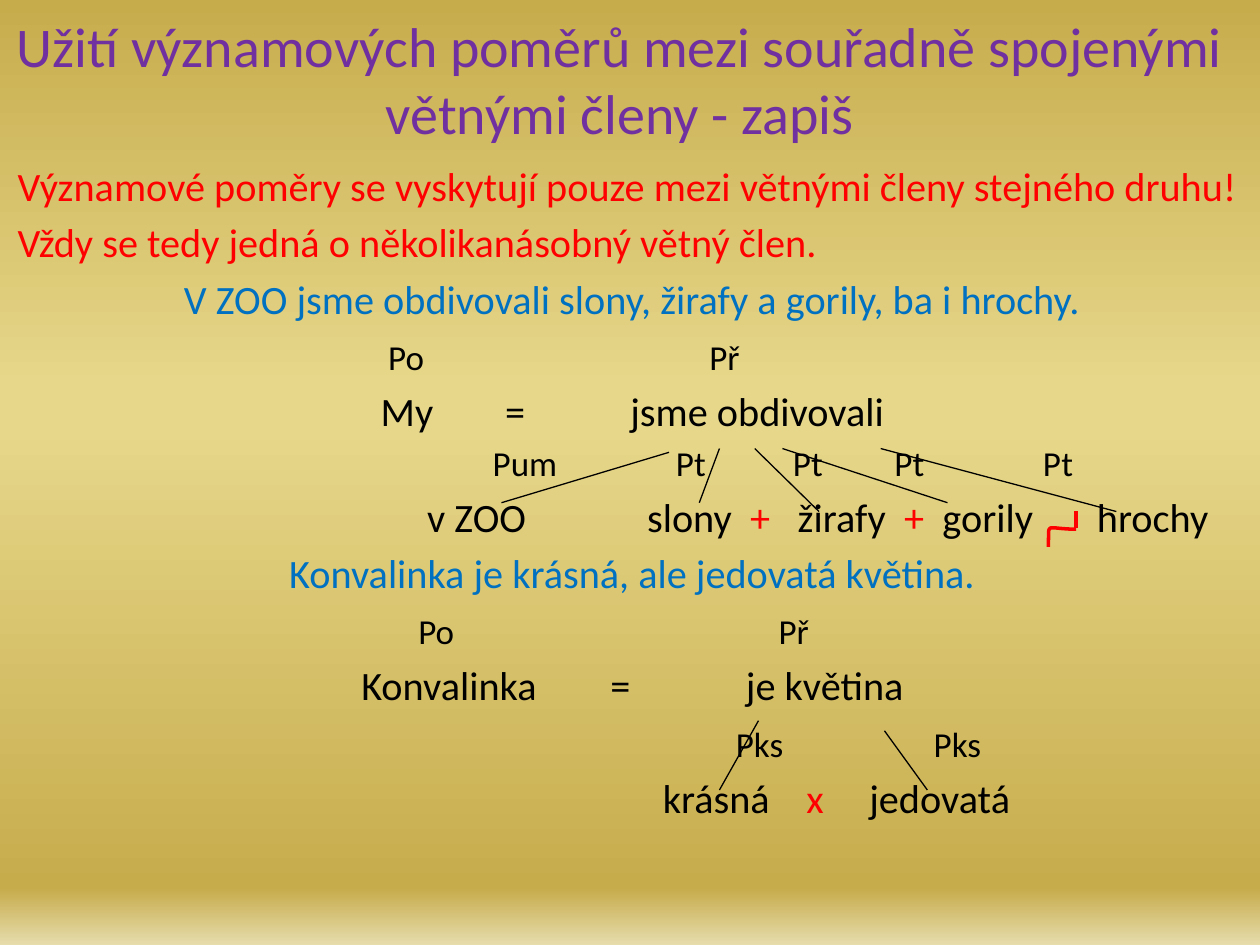
from dataclasses import dataclass

from lxml.etree import SubElement
from pptx import Presentation
from pptx.dml.color import RGBColor
from pptx.enum.shapes import MSO_CONNECTOR as Connector
from pptx.enum.text import MSO_ANCHOR as Anchor, MSO_AUTO_SIZE as AutoSize, PP_ALIGN as Align
from pptx.oxml.ns import qn
from pptx.util import Inches, Pt


@dataclass(frozen=True)
class Theme:
    font: str = "Calibri"
    title_size: float = 32
    body_size: float = 23
    label_size: float = 20
    space_share: float = 0.226
    thin: float = 0.75
    thick: float = 2
    purple: str = "7030A0"
    red: str = "FF0000"
    blue: str = "0070C0"
    black: str = "000000"
    gradient: tuple = ((0, "C7AC4C"), (41, "E6D78A"), (45, "E6D78A"), (94, "C7AC4C"), (100, "E6DCAC"))


def set_attributes(target, values):
    for name, value in values.items():
        setattr(target, name, value)


class SlideBuilder:
    COLUMNS = 100

    def __init__(self, presentation, theme):
        self.theme = theme
        self.cell = presentation.slide_width / self.COLUMNS
        self.slide = presentation.slides.add_slide(presentation.slide_layouts[1])

    def grid(self, *cells):
        return [round(cell * self.cell) for cell in cells]

    def background(self):
        fill = self.slide.background.fill
        fill.gradient()
        fill.gradient_angle = 270
        stops = self.slide.element.find(".//" + qn("a:gsLst"))
        for stop in list(stops):
            stops.remove(stop)
        for position, color in self.theme.gradient:
            stop = SubElement(stops, qn("a:gs"), pos=str(position * 1000))
            SubElement(stop, qn("a:srgbClr"), val=color)

    def placeholder(self, index, box, anchor):
        shape = self.slide.placeholders[index]
        set_attributes(shape, dict(zip(("left", "top", "width", "height"), self.grid(*box))))
        frame = shape.text_frame
        set_attributes(frame, {"auto_size": AutoSize.NONE, "word_wrap": True, "vertical_anchor": anchor})
        return frame

    def run(self, paragraph, text, size, color):
        run = paragraph.add_run()
        run.text = text
        set_attributes(run.font, {"name": self.theme.font, "size": Pt(size)})
        run.font.color.rgb = RGBColor.from_string(color)
        return run

    def gap(self, paragraph, width, size):
        run = self.run(paragraph, " ", size, self.theme.black)
        spacing = width - self.theme.space_share * size
        run._r.get_or_add_rPr().set("spc", str(round(spacing * 100)))

    def title(self, text, box):
        paragraph = self.placeholder(0, box, Anchor.MIDDLE).paragraphs[0]
        paragraph.alignment = Align.CENTER
        self.run(paragraph, text, self.theme.title_size, self.theme.purple)

    def body(self, lines, box):
        frame = self.placeholder(1, box, Anchor.TOP)
        for number, (indent, gap_size, runs, gaps) in enumerate(lines):
            paragraph = frame.add_paragraph() if number else frame.paragraphs[0]
            paragraph.alignment = Align.CENTER if indent is None else Align.LEFT
            properties = paragraph._p.get_or_add_pPr()
            properties.set("marL", str(self.grid(indent or 0)[0]))
            properties.set("indent", "0")
            SubElement(properties, qn("a:buNone"))
            for position, run in enumerate(runs):
                if position:
                    self.gap(paragraph, gaps[position - 1], gap_size)
                self.run(paragraph, *run)

    def curve(self, points):
        points = [self.grid(*point) for point in points]
        builder = self.slide.shapes.build_freeform(*points[0])
        builder.add_line_segments(points[1:], close=False)
        shape = builder.convert_to_shape()
        shape.shadow.inherit = False
        shape.fill.background()
        self.stroke(shape, self.theme.red, self.theme.thick)

    def branch(self, start, end):
        line = self.slide.shapes.add_connector(Connector.STRAIGHT, *self.grid(*start, *end))
        self.stroke(line, self.theme.black, self.theme.thin)
        SubElement(line._element.spPr, qn("a:effectLst"))

    def stroke(self, shape, color, width):
        shape.line.color.rgb = RGBColor.from_string(color)
        shape.line.width = Pt(width)


def bezier(start, first, second, end, steps=12):
    for step in range(steps + 1):
        t = step / steps
        weights = ((1 - t) ** 3, 3 * t * (1 - t) ** 2, 3 * t**2 * (1 - t), t**3)
        yield tuple(sum(w * v for w, v in zip(weights, axis)) for axis in zip(start, first, second, end))


def body_lines(theme):
    size, small = theme.body_size, theme.label_size

    def statement(text, color, indent=None):
        return indent, size, [(text, size, color)], ()

    def labels(indent, texts, gaps, gap_size=size):
        return indent, gap_size, [(text, small, theme.black) for text in texts], gaps

    def words(indent, texts, gaps):
        runs = [(text, size, theme.red if text in ("+", "x") else theme.black) for text in texts]
        return indent, size, runs, gaps

    return [
        statement("Významové poměry se vyskytují pouze mezi větnými členy stejného druhu!", theme.red, 0),
        statement("Vždy se tedy jedná o několikanásobný větný člen.", theme.red, 0),
        statement("V ZOO jsme obdivovali slony, žirafy a gorily, ba i hrochy.", theme.blue),
        labels(29.4, ("Po", "Př"), (163,)),
        words(None, ("My", "=", "jsme obdivovali"), (41, 60)),
        labels(37.7, ("Pum", "Pt", "Pt", "Pt", "Pt"), (67.8, 49.7, 40.7, 67.8), small),
        words(32.5, ("v ZOO", "slony", "+", "žirafy", "+", "gorily", "hrochy"),
              (69, 10.4, 15.6, 10.4, 10.4, 36.4)),
        statement("Konvalinka je krásná, ale jedovatá květina.", theme.blue),
        labels(31.8, ("Po", "Př"), (185.3,)),
        words(None, ("Konvalinka", "=", "je květina"), (42, 66)),
        labels(57, ("Pks", "Pks"), (85.9,)),
        words(51.2, ("krásná", "x", "jedovatá"), (20.8, 26)),
    ]


BRANCHES = [
    ((53.1, 35.9), (39.8, 39.9)),
    ((57.1, 35.6), (55.5, 39.9)),
    ((59.9, 35.6), (65, 40.6)),
    ((62.1, 35.6), (75.2, 39.9)),
    ((69.9, 35.6), (88.6, 40.6)),
    ((60.2, 57.2), (57.1, 62.7)),
    ((70.2, 58), (73.6, 62.7)),
]


def main():
    presentation = Presentation()
    set_attributes(presentation, {"slide_width": Inches(10), "slide_height": Inches(7.5)})
    theme = Theme()
    builder = SlideBuilder(presentation, theme)
    builder.background()
    builder.title("Užití významových poměrů mezi souřadně spojenými větnými členy - zapiš", (0, 0, 98.4, 12.5))
    builder.body(body_lines(theme), (0.4, 12.3, 99.6, 60.6))
    builder.curve(list(bezier((83.2, 43.4), (83.3, 41.3), (82.8, 42), (85.4, 42))))
    builder.curve([(85.4, 41.9), (85.4, 40.6)])
    for start, end in BRANCHES:
        builder.branch(start, end)
    presentation.save("out.pptx")


if __name__ == "__main__":
    main()
